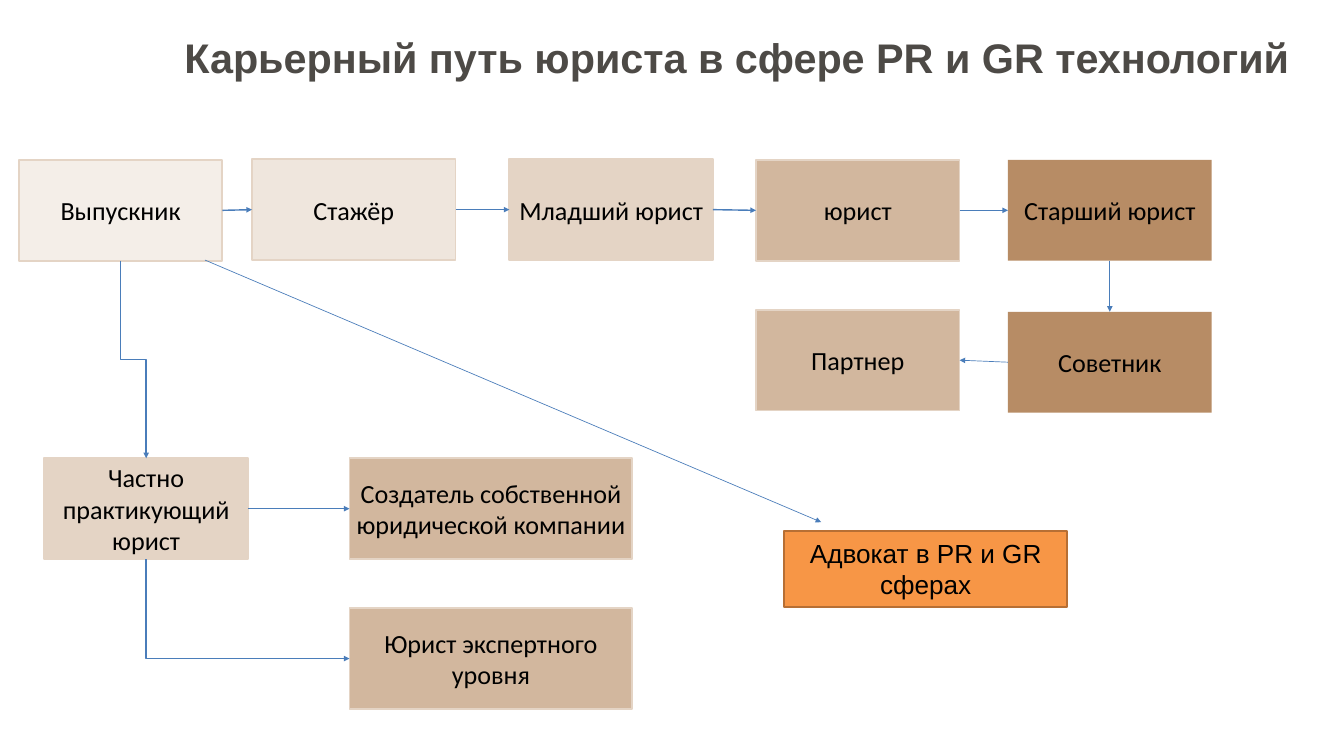
from lxml import etree
from pptx import Presentation
from pptx import util as u
from pptx.dml.color import RGBColor
from pptx.enum import shapes, text
from pptx.oxml.ns import qn

COLUMNS, ROWS = 80, 45
CELL = u.Inches(0.25)
BOX_WIDTH, WIDE_BOX, BOX_HEIGHT = 12.12, 16.84, 6
TOP, LEFT, BOTTOM, RIGHT = range(4)

BLACK = RGBColor(0x00, 0x00, 0x00)
TITLE_GREY = RGBColor(0x4D, 0x4A, 0x46)
IVORY = RGBColor(0xF4, 0xEE, 0xE8)
CREAM = RGBColor(0xEF, 0xE6, 0xDD)
SAND = RGBColor(0xE4, 0xD4, 0xC5)
TAN = RGBColor(0xD2, 0xB7, 0x9E)
BROWN = RGBColor(0xB7, 0x8C, 0x65)
ORANGE = RGBColor(0xF7, 0x96, 0x46)
RUST = RGBColor(0xB7, 0x6F, 0x34)
BLUE = RGBColor(0x4A, 0x7D, 0xBA)


def cells(count):
    return round(count * CELL)


def write(frame, words, font="Calibri", size=28, color=BLACK, bold=False,
          align=text.PP_ALIGN.CENTER, spacing=None):
    frame.word_wrap = True
    para = frame.paragraphs[0]
    para.alignment = align
    if spacing:
        para.line_spacing = spacing
    span = para.add_run()
    span.text = words
    span.font.name = font
    span.font.size = u.Pt(size)
    span.font.bold = bold
    span.font.color.rgb = color


class CareerMap:
    """Draws boxes and arrows of a career path on one slide."""

    def __init__(self, page):
        self.page = page

    def title(self, words, left, top, width, height):
        box = self.page.shapes.add_textbox(*map(cells, (left, top, width, height)))
        frame = box.text_frame
        frame.margin_left = frame.margin_right = 0
        frame.margin_top = frame.margin_bottom = 0
        write(frame, words, font="Arial", size=44.3, color=TITLE_GREY, bold=True,
              align=text.PP_ALIGN.RIGHT, spacing=1.33)

    def box(self, words, left, top, fill, width=BOX_WIDTH, height=BOX_HEIGHT,
            border=SAND, font="Calibri"):
        box = self.page.shapes.add_shape(
            shapes.MSO_SHAPE.RECTANGLE, *map(cells, (left, top, width, height)))
        box.shadow.inherit = False
        box.fill.solid()
        box.fill.fore_color.rgb = fill
        if border is None:
            box.line.fill.background()
        else:
            box.line.color.rgb = border
            box.line.width = u.Pt(2)
        box.text_frame.vertical_anchor = text.MSO_ANCHOR.MIDDLE
        write(box.text_frame, words, font=font)
        return box

    def arrow(self, start, end, weight=1.5, kind=shapes.MSO_CONNECTOR.STRAIGHT):
        arrow = self.page.shapes.add_connector(kind, *map(cells, start + end))
        arrow.line.color.rgb = BLUE
        arrow.line.width = u.Pt(weight)
        etree.SubElement(arrow.line._get_or_add_ln(), qn("a:tailEnd"), type="triangle")
        etree.SubElement(arrow._element.spPr, qn("a:effectLst"))
        return arrow

    def link(self, source, target, sides=(RIGHT, LEFT), weight=1.5):
        arrow = self.arrow((0, 0), (1, 1), weight)
        arrow.begin_connect(source, sides[0])
        arrow.end_connect(target, sides[1])

    def elbow_down(self, source, target, side, preset):
        start_x, start_y = source.left + source.width / 2, source.top + source.height
        if side == TOP:
            end_x, end_y = target.left + target.width / 2, target.top
        else:
            end_x, end_y = target.left, target.top + target.height / 2
        middle_x, middle_y = (start_x + end_x) / 2, (start_y + end_y) / 2
        half_x, half_y = (end_x - start_x) / 2, (end_y - start_y) / 2
        arrow = self.arrow(
            ((middle_x - half_y) / CELL, (middle_y - half_x) / CELL),
            ((middle_x + half_y) / CELL, (middle_y + half_x) / CELL),
            kind=shapes.MSO_CONNECTOR.ELBOW)
        outline = arrow._element.spPr
        outline.find(qn("a:xfrm")).set("rot", str(270 * 60000))
        outline.find(qn("a:xfrm")).set("flipH", "1")
        outline.find(qn("a:prstGeom")).set("prst", preset)


def main():
    deck = Presentation()
    deck.slide_width, deck.slide_height = cells(COLUMNS), cells(ROWS)
    career = CareerMap(deck.slides.add_slide(deck.slide_layouts[6]))
    career.title("Карьерный путь юриста в сфере PR и GR технологий",
                 1.12, 0.96, 75.64, 3.96)

    graduate = career.box("Выпускник", 1.12, 9.52, IVORY)
    trainee = career.box("Стажёр", 15, 9.48, CREAM)
    junior = career.box("Младший юрист", 30.32, 9.48, SAND)
    lawyer = career.box("юрист", 45, 9.52, TAN)
    senior = career.box("Старший юрист", 60, 9.52, BROWN, border=None)
    adviser = career.box("Советник", 60, 18.56, BROWN, border=None)
    partner = career.box("Партнер", 45, 18.44, TAN)
    private = career.box("Частно практикующий юрист", 2.64, 27.28, SAND)
    founder = career.box("Создатель собственной юридической компании",
                         20.8, 27.28, TAN, width=WIDE_BOX)
    expert = career.box("Юрист экспертного уровня", 20.8, 36.2, TAN, width=WIDE_BOX)
    career.box("Адвокат в PR и GR сферах", 46.68, 31.6, ORANGE, width=WIDE_BOX,
               height=4.52, border=RUST, font="Arial")

    for source, target in ((graduate, trainee), (trainee, junior),
                           (junior, lawyer), (private, founder)):
        career.link(source, target)
    career.link(lawyer, senior, weight=0.75)
    career.link(senior, adviser, (BOTTOM, TOP), weight=0.75)
    career.link(adviser, partner, (LEFT, RIGHT), weight=0.75)
    career.elbow_down(graduate, private, TOP, "bentConnector3")
    career.elbow_down(private, expert, LEFT, "bentConnector2")
    career.arrow((12.2, 15.48), (48.88, 31.08), weight=0.75)
    deck.save("out.pptx")


if __name__ == "__main__":
    main()
